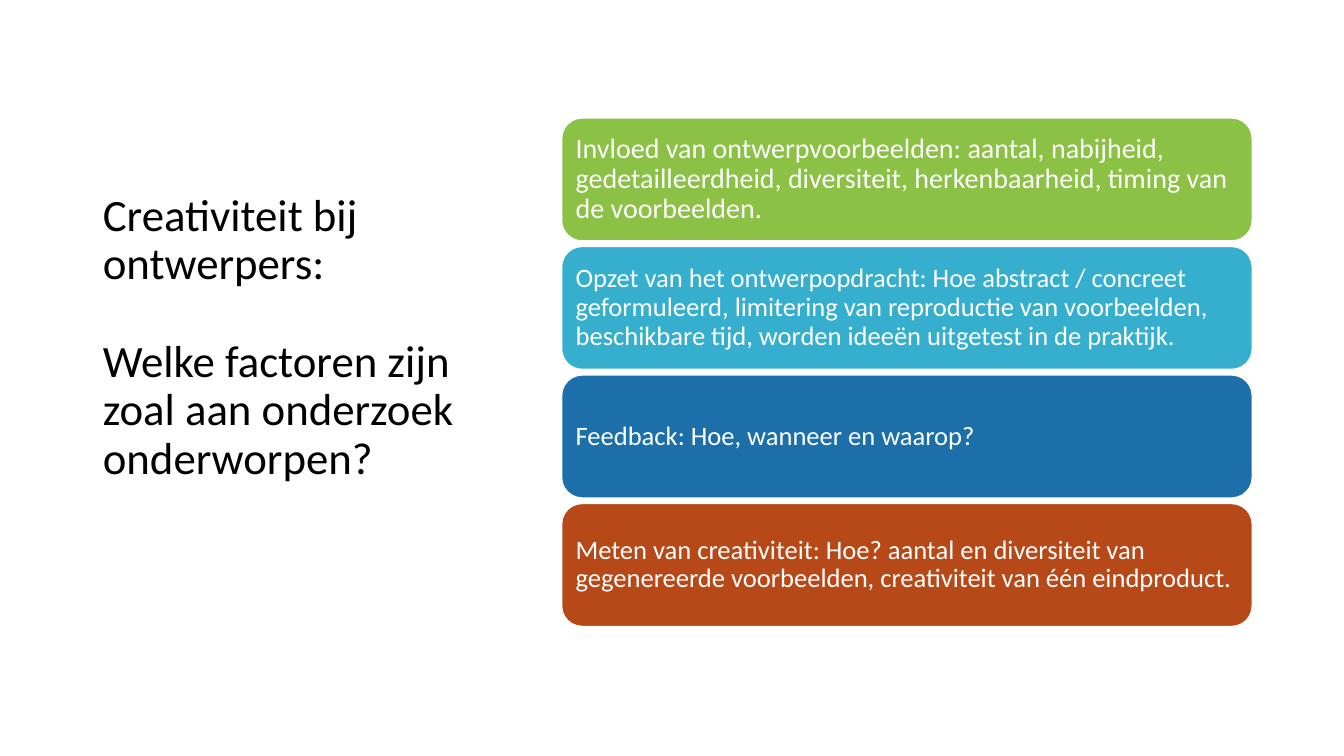
from pptx import Presentation
from pptx.dml.color import RGBColor as RGB
from pptx.enum.shapes import MSO_SHAPE as Shape
from pptx.enum.text import MSO_ANCHOR as Anchor, MSO_AUTO_SIZE as AutoSize, PP_ALIGN as Align
from pptx.util import Inches, Pt

# Content
TITLE = ["Creativiteit bij ontwerpers:", "Welke factoren zijn zoal aan onderzoek onderworpen?"]
# text, fill colour, type size
FACTORS = [
    ("Invloed van ontwerpvoorbeelden: aantal, nabijheid, gedetailleerdheid, diversiteit, "
     "herkenbaarheid, timing van de voorbeelden.", "8BC145", 20),
    ("Opzet van het ontwerpopdracht: Hoe abstract / concreet geformuleerd, limitering van "
     "reproductie van voorbeelden, beschikbare tijd, worden ideeën uitgetest in de praktijk.",
     "36AFCE", 19),
    ("Feedback: Hoe, wanneer en waarop?", "1D6FA9", 19),
    ("Meten van creativiteit: Hoe? aantal en diversiteit van gegenereerde voorbeelden, "
     "creativiteit van één eindproduct.", "B74919", 19),
]
THEME = {"font": "Calibri", "dark": "000000", "light": "FFFFFF", "title": 32, "title_gap": 35}

# Layout in inches
TITLE_BOX = (0.92, 0.61, 3.95, 6.09)
CARD_LEFT, CARD_TOP, CARD_WIDTH, CARD_HEIGHT = 5.57, 1.17, 6.85, 1.22
CARD_STEP = 1.275
CARD_INSET = 0.08


def format_paragraph(paragraph, size, color):
    paragraph.alignment = Align.LEFT
    paragraph.line_spacing = 0.9
    for run in paragraph.runs:
        run.font.name = THEME["font"]
        run.font.size = Pt(size)
        run.font.color.rgb = RGB.from_string(color)


def add_title(slide):
    title = slide.shapes.title
    title.left, title.top, title.width, title.height = map(Inches, TITLE_BOX)
    frame = title.text_frame
    frame.text = "\n".join(TITLE)
    frame.word_wrap = True
    frame.auto_size = AutoSize.NONE
    frame.vertical_anchor = Anchor.MIDDLE
    frame.margin_left = frame.margin_right = Inches(0.1)
    frame.margin_top, frame.margin_bottom = Inches(0.05), Inches(0.65)
    for index, paragraph in enumerate(frame.paragraphs):
        format_paragraph(paragraph, THEME["title"], THEME["dark"])
        paragraph.space_before = Pt(THEME["title_gap"] if index else 0)


def add_factor(slide, index, text, fill, size):
    top = CARD_TOP + index * CARD_STEP
    card = slide.shapes.add_shape(Shape.ROUNDED_RECTANGLE, Inches(CARD_LEFT), Inches(top),
                                  Inches(CARD_WIDTH), Inches(CARD_HEIGHT))
    card.shadow.inherit = False
    card.fill.solid()
    card.fill.fore_color.rgb = RGB.from_string(fill)
    card.line.color.rgb = RGB.from_string(THEME["light"])
    card.line.width = Pt(1)
    frame = card.text_frame
    frame.text = text
    frame.word_wrap = True
    frame.vertical_anchor = Anchor.MIDDLE
    frame.margin_left = frame.margin_right = Inches(CARD_INSET)
    frame.margin_top = frame.margin_bottom = Inches(CARD_INSET)
    format_paragraph(frame.paragraphs[0], size, THEME["light"])


def main():
    prs = Presentation()
    prs.slide_width, prs.slide_height = Inches(13.33), Inches(7.5)
    slide = prs.slides.add_slide(prs.slide_layouts[5])
    add_title(slide)
    # Stack of factor cards
    for index, factor in enumerate(FACTORS):
        add_factor(slide, index, *factor)
    prs.save("out.pptx")


if __name__ == "__main__":
    main()
